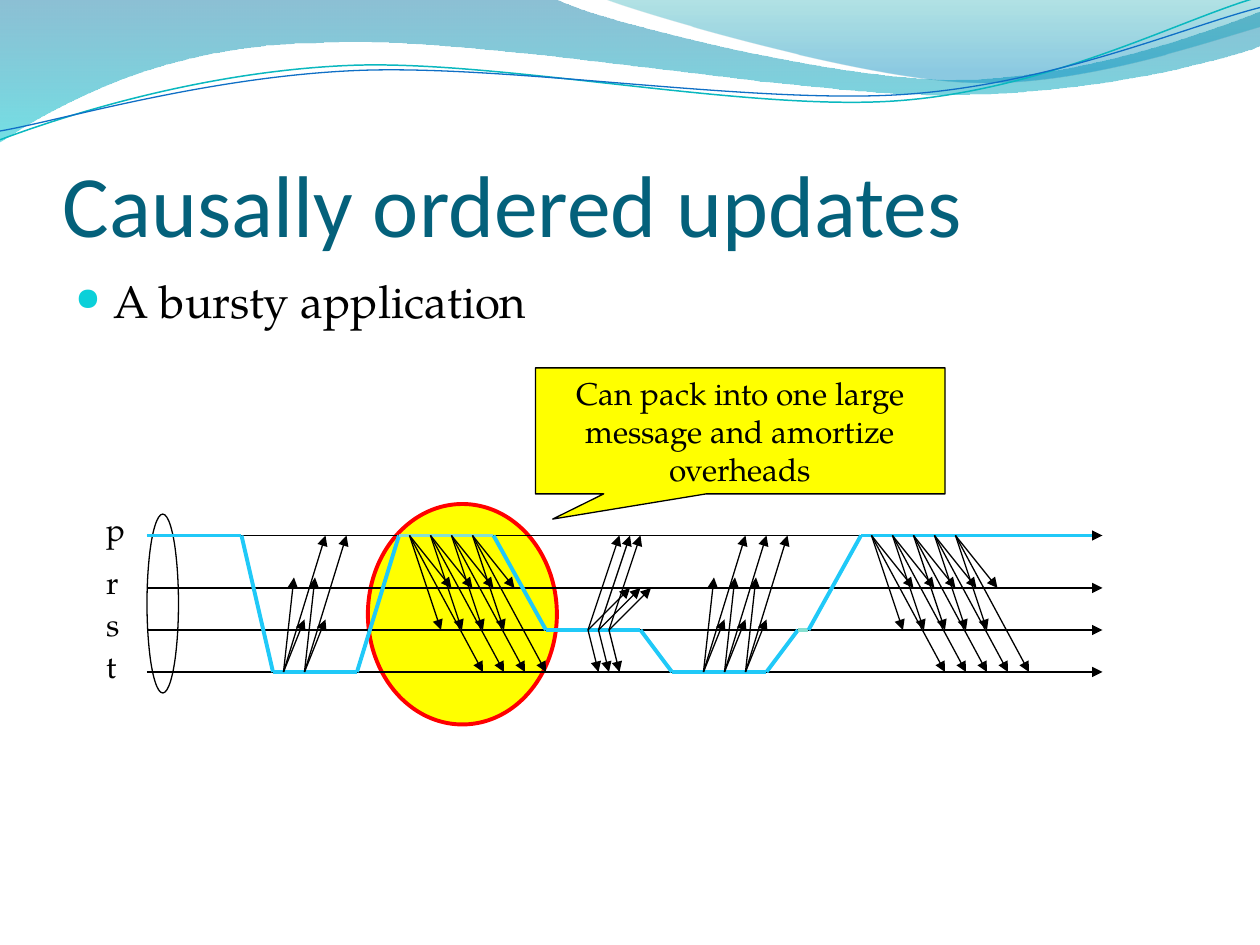
import pptx
import pptx.util
import pptx.dml.color
import pptx.enum.shapes
import pptx.enum.text
import pptx.oxml
import pptx.oxml.ns

Inch = pptx.util.Inches
Pt = pptx.util.Pt
RGB = pptx.dml.color.RGBColor.from_string
KIND = pptx.enum.shapes.MSO_SHAPE
ALIGN = pptx.enum.text.PP_ALIGN
ANCHOR = pptx.enum.text.MSO_ANCHOR
NS = pptx.oxml.ns.nsdecls("a")
qn = pptx.oxml.ns.qn

THEME = {
    "head": {"name": "Calibri", "size": 50, "color": "04617B"},
    "body": {"name": "TeX Gyre Pagella", "size": 26, "color": "000000"},
    "note": {"name": "TeX Gyre Pagella", "size": 18, "color": "000000"},
    "ink": "000000", "mark": "FFFF00", "ring": "FF0000", "dot": "0BD0D9",
    "token": "20C9F8", "pale": "85DFD0", "thin": 0.75, "bold": 2.25,
}

# Content: the diagram lies on a grid of twelfths of an inch
TITLE = "Causally ordered updates"
POINT = "A bursty application"
NOTE = "Can pack into one large message and amortize overheads"
UNIT = 1 / 12
ROWS = {"p": 51, "r": 56, "s": 60, "t": 64}
START, END = 14, 105

# The token's route: column, process, colour of the stretch leading there
ROUTE = [
    (14, "p", None), (23, "p", "token"), (26, "t", "token"),
    (34, "t", "token"), (38, "p", "token"), (47, "p", "pale"),
    (52, "s", "token"), (61, "s", "token"), (64, "t", "token"),
    (73, "t", "token"), (76, "s", "token"), (77, "s", "pale"),
    (82, "p", "token"), (104, "p", "token"),
]

# Each sender's fan (columns across, target row) and the columns it sends at
FANS = {
    "p": [(4, 56), (7, 64), (3, 60)],
    "t": [(2, 59), (4, 51), (1, 55)],
    "s": [(3, 51), (1, 64), (4, 56)],
}
SENDS = {
    "p": [39, 41, 43, 45, 83, 85, 87, 89, 91],
    "t": [27, 29, 67, 69, 71],
    "s": [56, 57, 58],
}

# Header waves: each step is a point to draw to, or the three of a curve
BANDS = [
    {"stops": [(0, "0074A1", 45), (1, "00C6CF", 55)], "from": (0, -0.01),
     "steps": [(4.4, -0.01), (4.76, 0.17, 6.64, 0.63, 7.58, 0.63),
               (8.53, 0.63, 9.58, 0.26, 10, 0.09), (10.01, 0.36),
               (9.83, 0.44, 8.7, 0.76, 7.46, 0.75),
               (6.22, 0.75, 3.82, 0.28, 2.57, 0.34),
               (1.29, 0.35, 0.46, 0.83, -0.01, 1.13)]},
    {"stops": [(0, "00A1A9", 30), (0.8, "008BBF", 45)], "from": (4.79, -0.01),
     "steps": [(5.09, 0.11, 6.82, 0.62, 7.69, 0.65),
               (8.56, 0.69, 9.61, 0.32, 10, 0.21), (10, 0)]},
    {"line": ("0AB8BF", 0.85), "from": (0, 1.11),
     "steps": [(0.48, 0.93, 1.58, 0.57, 2.77, 0.52),
               (3.95, 0.47, 5.93, 0.89, 7.13, 0.8),
               (8.33, 0.71, 9.38, 0.15, 9.98, -0.02)]},
    {"line": ("0F6FC6", 0.75), "from": (0, 1.04),
     "steps": [(0.47, 0.96, 1.64, 0.61, 2.83, 0.56),
               (4.03, 0.51, 5.97, 0.83, 7.17, 0.75),
               (8.36, 0.67, 9.41, 0.21, 10, 0.06)]},
]

deck = pptx.Presentation()
deck.slide_width, deck.slide_height = Inch(10), Inch(7.5)
shapes = deck.slides.add_slide(deck.slide_layouts[6]).shapes


def paint(shape, fill=None, line=None, width=THEME["thin"]):
    shape.shadow.inherit = False
    if fill:
        shape.fill.solid()
        shape.fill.fore_color.rgb = RGB(fill)
    else:
        shape.fill.background()
    if line:
        shape.line.color.rgb = RGB(line)
        shape.line.width = Pt(width)
    else:
        shape.line.fill.background()


def bend(shape, steps):
    """Join each curve's three points into one cubic segment."""
    lines = iter(list(shape.element.spPr.iter(qn("a:lnTo"))))
    for step in steps:
        first = next(lines)
        if len(step) == 6:
            curve = pptx.oxml.parse_xml(f"<a:cubicBezTo {NS}/>")
            first.addprevious(curve)
            for node in (first, next(lines), next(lines)):
                curve.append(node[0])
                node.getparent().remove(node)


def wave(band):
    # Outline in hundredths of an inch
    flat = [v for step in band["steps"] for v in step]
    spots = [(round(x * 100), round(y * 100)) for x, y in zip(flat[::2], flat[1::2])]
    x, y = (round(v * 100) for v in band["from"])
    pen = shapes.build_freeform(x, y, scale=Inch(0.01))
    pen.add_line_segments(spots, close="stops" in band)
    shape = pen.convert_to_shape()
    bend(shape, band["steps"])
    paint(shape, None, *band.get("line", ()))
    if "stops" in band:
        shape.fill.gradient()
        shape.fill.gradient_angle = 270
        for stop, (place, tone, _) in zip(shape.fill.gradient_stops, band["stops"]):
            stop.position = place
            stop.color.rgb = RGB(tone)
        tints = list(shape.element.spPr.iter(qn("a:srgbClr")))
        for tint, (_, _, solid) in zip(tints, band["stops"]):
            tint.append(pptx.oxml.parse_xml(f'<a:alpha {NS} val="{solid * 1000}"/>'))


def write(shape, text, style, **frame):
    body = shape.text_frame
    body.word_wrap = True
    for key, value in frame.items():
        setattr(body, key, value)
    para = body.paragraphs[0]
    run = para.add_run()
    run.text = text
    face = THEME[style]
    for key, value in {"name": face["name"], "size": Pt(face["size"])}.items():
        setattr(run.font, key, value)
    run.font.color.rgb = RGB(face["color"])
    return para


def box(x, y, w, h):
    return shapes.add_textbox(Inch(x), Inch(y), Inch(w), Inch(h))


def form(kind, x, y, w, h):
    return shapes.add_shape(kind, Inch(x), Inch(y), Inch(w), Inch(h))


def link(x, y, to_x, to_y, tone="ink", width=THEME["thin"], arrow=False):
    ends = [Inch(v * UNIT) for v in (x, y, to_x, to_y)]
    line = shapes.add_connector(pptx.enum.shapes.MSO_CONNECTOR.STRAIGHT, *ends)
    line.line.color.rgb = RGB(THEME[tone])
    line.line.width = Pt(width)
    if arrow:
        line.element.spPr.find(qn("a:ln")).append(
            pptx.oxml.parse_xml(f'<a:tailEnd {NS} type="triangle"/>'))
    line.element.spPr.append(pptx.oxml.parse_xml(f"<a:effectLst {NS}/>"))


# Header
for band in BANDS:
    wave(band)

# Highlighted burst
paint(form(KIND.OVAL, 2.92, 4, 1.5, 1.75), THEME["mark"], THEME["ring"], THEME["bold"])

# Title and bullet
write(box(0.5, 0.77, 9, 1.25), TITLE, "head",
      vertical_anchor=ANCHOR.BOTTOM, margin_left=0, margin_right=0, margin_bottom=0)
props = write(box(0.5, 2.12, 9, 4.8), POINT, "body")._p.get_or_add_pPr()
props.set("marL", str(Inch(0.3)))
props.set("indent", str(-Inch(0.3)))
for part in (f'<a:buClr {NS}><a:srgbClr val="{THEME["dot"]}"/></a:buClr>',
             f'<a:buSzPct {NS} val="70000"/>', f'<a:buChar {NS} char="●"/>'):
    props.append(pptx.oxml.parse_xml(part))

# Process timelines and their group
for name, row in ROWS.items():
    link(START, row, END, row, width=1 if name == "p" else THEME["thin"], arrow=True)
    write(box(9 * UNIT, (row - 3) * UNIT, 0.33, 0.4), name, "note")
paint(form(KIND.OVAL, START * UNIT, 4.08, 0.25, 1.42), line=THEME["ink"])

# Token route
for (x, name, _), (to_x, target, tone) in zip(ROUTE, ROUTE[1:]):
    link(x, ROWS[name], to_x, ROWS[target], tone, THEME["bold"])

# Message bursts
for name, starts in SENDS.items():
    for x in starts:
        for across, row in FANS[name]:
            link(x, ROWS[name], x + across, row, arrow=True)

# Callout
call = form(KIND.RECTANGULAR_CALLOUT, 4.25, 2.92, 3.25, 1)
call.adjustments[0], call.adjustments[1] = -0.458, 0.7
paint(call, THEME["mark"], THEME["ink"])
write(call, NOTE, "note", vertical_anchor=ANCHOR.TOP).alignment = ALIGN.CENTER

deck.save("out.pptx")
